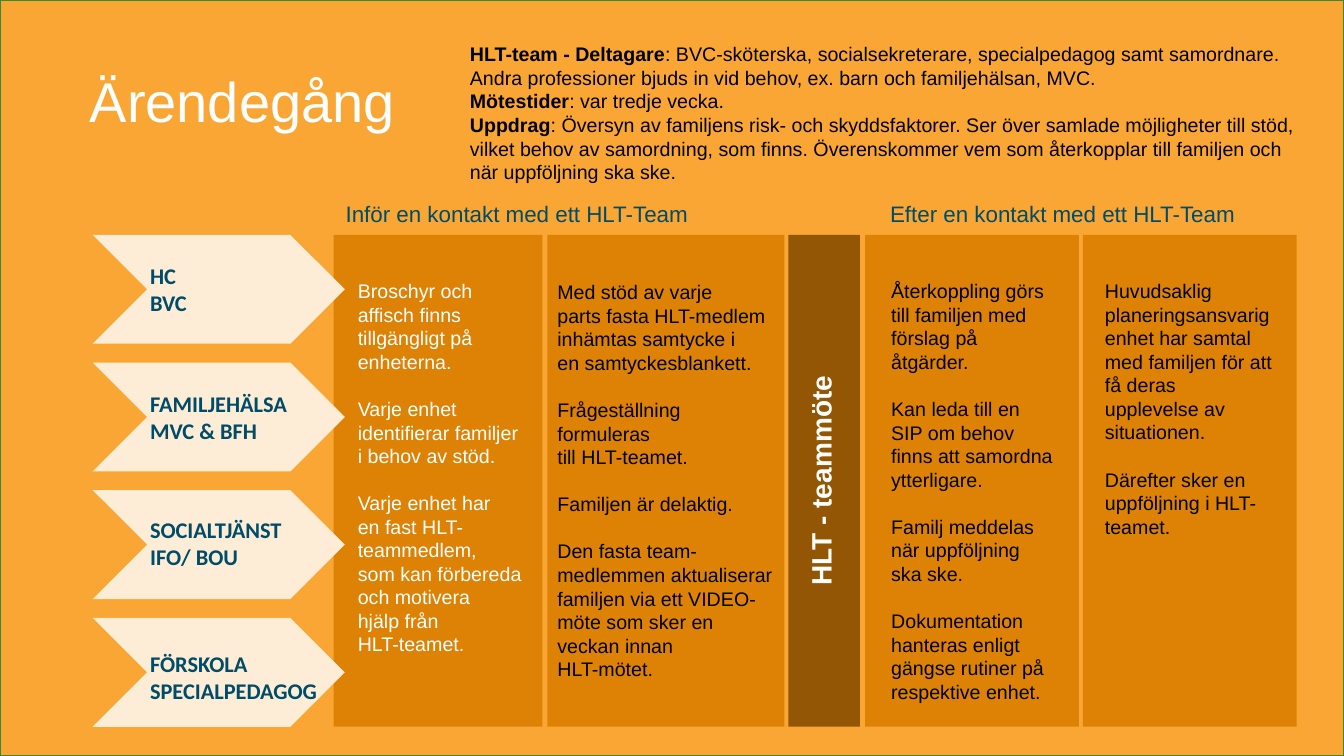
from pptx import Presentation
from pptx.dml.color import RGBColor
from pptx.enum.shapes import MSO_SHAPE
from pptx.enum.text import MSO_ANCHOR, PP_ALIGN
from pptx.util import Inches, Pt

WHITE, BLACK, TEAL = "FFFFFF", "000000", "004B68"
ORANGE, BROWN, CREAM = "DD8205", "935604", "FEEDD6"
TOP, HEIGHT = 2.33, 4.88


def rgb(value):
    return RGBColor.from_string(value)


class SlideBuilder:
    font = "Arial"
    body_size = 14
    group_gap = 16.9

    def __init__(self, prs):
        self.slide = prs.slides.add_slide(prs.slide_layouts[5])

    def style(self, p, size, color, bold=False, font=None):
        p.font.name = font or self.font
        p.font.size = Pt(size)
        p.font.bold = bold
        p.font.color.rgb = rgb(color)

    def title(self, text, x, y, w, h):
        sp = self.slide.shapes.title
        sp.left, sp.top, sp.width, sp.height = map(Inches, (x, y, w, h))
        tf = sp.text_frame
        tf.text = text
        tf.vertical_anchor = MSO_ANCHOR.BOTTOM
        p = tf.paragraphs[0]
        p.alignment = PP_ALIGN.LEFT
        p.line_spacing = 0.9
        self.style(p, 40, WHITE)

    def shape(self, kind, x, y, w, h, fill, line=None):
        sp = self.slide.shapes.add_shape(kind, *map(Inches, (x, y, w, h)))
        sp.shadow.inherit = False
        sp.fill.solid()
        sp.fill.fore_color.rgb = rgb(fill)
        if line:
            sp.line.color.rgb = rgb(line)
            sp.line.width = Pt(1)
        else:
            sp.line.fill.background()
        return sp

    def box(self, x, y, w, h):
        sp = self.slide.shapes.add_textbox(*map(Inches, (x, y, w, h)))
        sp.text_frame.word_wrap = True
        return sp

    def text(self, lines, x, y, w, h, size, color, bold=False, font=None):
        sp = self.box(x, y, w, h)
        tf = sp.text_frame
        for i, line in enumerate(lines):
            p = tf.add_paragraph() if i else tf.paragraphs[0]
            p.text = line
            self.style(p, size, color, bold, font)
        return sp

    def column(self, groups, x, y, w, h, color):
        """Body text whose groups of lines are set apart by one line."""
        lines = [line for group in groups for line in group]
        sp = self.text(lines, x, y, w, h, self.body_size, color)
        paragraphs = sp.text_frame.paragraphs
        start = 0
        for group in groups[:-1]:
            start += len(group)
            paragraphs[start].space_before = Pt(self.group_gap)

    def facts(self, items, x, y, w, h):
        tf = self.box(x, y, w, h).text_frame
        tf.margin_left = Inches(0.04)
        for i, (label, lines) in enumerate(items):
            p = tf.add_paragraph() if i else tf.paragraphs[0]
            self.style(p, self.body_size, BLACK)
            r = p.add_run()
            r.text = label
            r.font.bold = True
            for n, line in enumerate(lines):
                if n:
                    p.add_line_break()
                p.add_run().text = line


def main():
    prs = Presentation()
    prs.slide_width, prs.slide_height = Inches(13.33), Inches(7.5)
    s = SlideBuilder(prs)

    # Background, moved behind the title
    background = s.shape(MSO_SHAPE.RECTANGLE, 0, 0, 13.33, 7.5, "FAA634", "3B8835")
    s.slide.shapes.title._element.addprevious(background._element)

    # Panels
    for x, w, fill in [(3.31, 2.07, ORANGE), (5.43, 2.35, ORANGE), (7.82, 0.71, BROWN),
                       (8.58, 2.12, ORANGE), (10.74, 2.12, ORANGE)]:
        s.shape(MSO_SHAPE.RECTANGLE, x, TOP, w, HEIGHT, fill)

    # Title, facts and headings
    s.title("Ärendegång", 0.79, 0.21, 11.81, 1.18)
    s.facts([
        ("HLT-team - Deltagare",
         [": BVC-sköterska, socialsekreterare, specialpedagog samt samordnare. ",
          "Andra professioner bjuds in vid behov, ex. barn och familjehälsan, MVC."]),
        ("Mötestider", [": var tredje vecka."]),
        ("Uppdrag",
         [": Översyn av familjens risk- och skyddsfaktorer. Ser över samlade möjligheter "
          "till stöd, vilket behov av samordning, som finns. Överenskommer vem som "
          "återkopplar till familjen och när uppföljning ska ske."]),
    ], 4.62, 0.37, 8.45, 1.51)
    for heading, x in [("Inför en kontakt med ett HLT-Team", 3.33),
                       ("Efter en kontakt med ett HLT-Team", 8.73)]:
        s.text([heading], x, 1.94, 3.94, 0.6, 16, TEAL)

    # Units on chevrons
    units = [(["HC", "BVC"], 2.55),
             (["FAMILJEHÄLSA", "MVC & BFH"], 3.82),
             (["SOCIALTJÄNST", "IFO/ BOU"], 5.07),
             (["FÖRSKOLA", "SPECIALPEDAGOG"], 6.4)]
    pitch = (HEIGHT - 1.08) / (len(units) - 1)
    for i, (lines, y) in enumerate(units):
        s.shape(MSO_SHAPE.CHEVRON, 0.92, TOP + i * pitch, 2.5, 1.08, CREAM)
        s.text(lines, 1.39, y, 2.23, 0.64, 16, TEAL, True, "Calibri")

    # Column texts
    s.column([
        ["Broschyr och affisch finns tillgängligt på enheterna."],
        ["Varje enhet identifierar familjer i behov av stöd."],
        ["Varje enhet har \nen fast HLT-teammedlem,",
         "som kan förbereda och motivera\nhjälp från", "HLT-teamet."],
    ], 3.45, 2.72, 1.88, 3.87, WHITE)
    s.column([
        ["Med stöd av varje", "parts fasta HLT-medlem inhämtas samtycke i",
         "en samtyckesblankett."],
        ["Frågeställning", "formuleras", "till HLT-teamet."],
        ["Familjen är delaktig."],
        ["Den fasta team-medlemmen aktualiserar familjen via ett VIDEO-möte "
         "som sker en veckan innan", "HLT-mötet."],
    ], 5.43, 2.73, 2.36, 4.11, BLACK)
    s.column([
        ["Återkoppling görs till familjen med förslag på\nåtgärder."],
        ["Kan leda till en \nSIP om behov finns att samordna ytterligare."],
        ["Familj meddelas när uppföljning \nska ske."],
        ["Dokumentation", "hanteras enligt gängse rutiner på respektive enhet."],
    ], 8.74, 2.72, 1.88, 4.11, BLACK)
    s.column([
        ["Huvudsaklig planeringsansvarig enhet har samtal med familjen för att "
         "få deras upplevelse av situationen."],
        ["Därefter sker en uppföljning i HLT-teamet."],
    ], 10.86, 2.72, 1.88, 2.69, BLACK)

    # Vertical meeting label
    sp = s.text(["HLT - teammöte"], 5.78, 4.47, HEIGHT, 0.6, 20, WHITE, True)
    sp.rotation = 270
    sp.text_frame.paragraphs[0].alignment = PP_ALIGN.CENTER

    prs.save("out.pptx")


if __name__ == "__main__":
    main()
